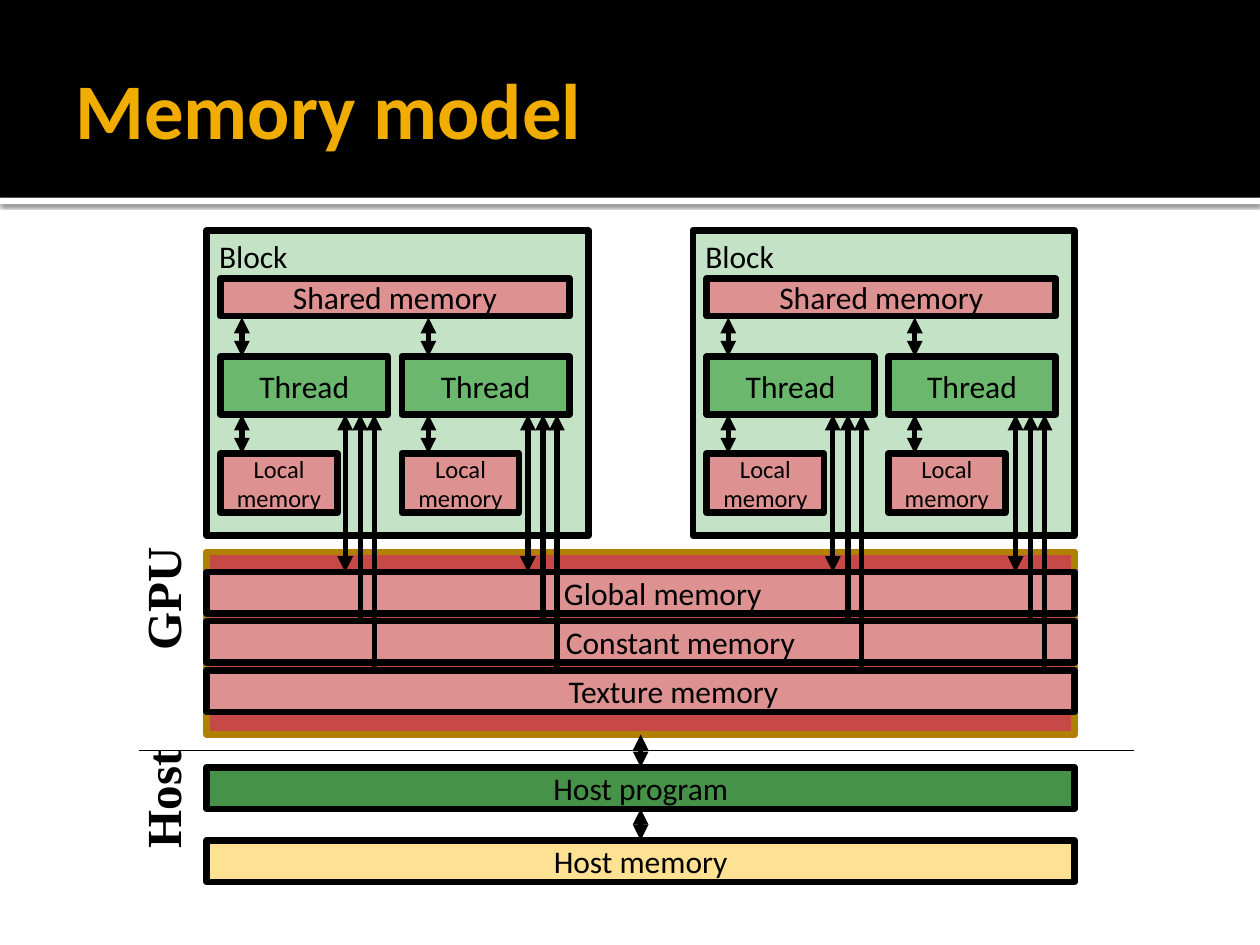
import pptx
import pptx.dml.color
import pptx.enum.shapes
import pptx.enum.text
import pptx.oxml
import pptx.oxml.ns
import pptx.util

RGBColor = pptx.dml.color.RGBColor
ALIGN = pptx.enum.text.PP_ALIGN
ANCHOR = pptx.enum.text.MSO_ANCHOR
RECTANGLE = pptx.enum.shapes.MSO_SHAPE.RECTANGLE
STRAIGHT = pptx.enum.shapes.MSO_CONNECTOR.STRAIGHT

BLACK = RGBColor(0x00, 0x00, 0x00)
WHITE = RGBColor(0xFF, 0xFF, 0xFF)
AMBER = RGBColor(0xF0, 0xAD, 0x00)
GOLD = RGBColor(0xB2, 0x80, 0x00)
CREAM = RGBColor(0xFF, 0xE1, 0x93)
RED = RGBColor(0xC6, 0x48, 0x47)
PINK = RGBColor(0xDD, 0x91, 0x91)
PALE_GREEN = RGBColor(0xC4, 0xE2, 0xC5)
GREEN = RGBColor(0x6B, 0xB7, 0x6D)
DARK_GREEN = RGBColor(0x47, 0x92, 0x49)

# The slide is a grid of 100 columns by 75 rows, each a tenth of an inch
COLUMNS, ROWS = 100, 75
BAR_LEFT, BAR_WIDTH, BAR_HEIGHT = 16.4, 68.9, 3.3
THREAD_TOP, THREAD_HEIGHT = 28.3, 4.6
THREAD_BOTTOM = THREAD_TOP + THREAD_HEIGHT
MEMORY_TOP, MEMORY_PITCH = 45.4, 3.9
BODY = {"size": pptx.util.Pt(18), "name": "Calibri"}
SMALL = {**BODY, "size": pptx.util.Pt(14)}
TITLE = {"size": pptx.util.Pt(45), "name": "Calibri", "bold": True}
SIDE = {"size": pptx.util.Pt(28), "name": "Times New Roman", "bold": True}


def grid(*cells):
    """Turn grid units into lengths."""
    return [pptx.util.Inches(cell / 10) for cell in cells]


def write(box, text, font, color=BLACK, align=ALIGN.LEFT, indent=0):
    """Put one formatted paragraph into a box."""
    box.text_frame.word_wrap = True
    para = box.text_frame.paragraphs[0]
    para.alignment = align
    if indent:
        properties = para._p.get_or_add_pPr()
        properties.set("marL", str(grid(indent)[0]))
        properties.set("indent", "0")
    span = para.add_run()
    span.text = text
    for name, value in font.items():
        setattr(span.font, name, value)
    span.font.color.rgb = color


def add_panel(page, place, fill, line=None):
    """Add a plain rectangle, with an outline if a line colour is given."""
    panel = page.shapes.add_shape(RECTANGLE, *grid(*place))
    panel.shadow.inherit = False
    panel.fill.solid()
    panel.fill.fore_color.rgb = fill
    if line is None:
        panel.line.fill.background()
    else:
        panel.line.color.rgb = line
        panel.line.width = pptx.util.Pt(3.78)
    return panel


def add_label_panel(page, place, fill, text, font=BODY, indent=0):
    """Add an outlined rectangle with centred text."""
    panel = add_panel(page, place, fill, BLACK)
    panel.text_frame.vertical_anchor = ANCHOR.MIDDLE
    write(panel, text, font, align=ALIGN.CENTER, indent=indent)
    return panel


def add_line(page, start, end, width=3, heads=("headEnd", "tailEnd")):
    """Add a straight line with triangles at the named ends."""
    line = page.shapes.add_connector(STRAIGHT, *grid(*start, *end))
    line.line.color.rgb = BLACK
    line.line.width = pptx.util.Pt(width)
    outline = line.line._get_or_add_ln()
    for head in heads:
        pptx.oxml.ns.qn("a:" + head)
        outline.append(pptx.oxml.parse_xml(
            f'<a:{head} {pptx.oxml.ns.nsdecls("a")} type="triangle"/>'))
    line._element.spPr.append(pptx.oxml.parse_xml(
        f'<a:effectLst {pptx.oxml.ns.nsdecls("a")}/>'))
    return line


def join(page, upper, lower):
    """Link the bottom of one rectangle to the top of the next."""
    line = add_line(page, (0, 0), (0, 0))
    line.begin_connect(upper, 2)
    line.end_connect(lower, 0)


def add_header(page):
    """Add the black band, the shaded strip below it and the title."""
    strip = add_panel(page, (0, 15.7, COLUMNS, 0.5), WHITE)
    effects = strip._element.spPr.find(pptx.oxml.ns.qn("a:effectLst"))
    effects.append(pptx.oxml.parse_xml(
        f'<a:outerShdw {pptx.oxml.ns.nsdecls("a")} blurRad="31750" dist="10160" '
        'dir="5400000" algn="tl" rotWithShape="0"><a:srgbClr val="000000">'
        '<a:alpha val="60000"/></a:srgbClr></a:outerShdw>'))
    add_panel(page, (0, 0, COLUMNS, 15.7), BLACK)
    box = page.shapes.add_textbox(*grid(5, 1.7, 90, 13.7))
    box.text_frame.vertical_anchor = ANCHOR.MIDDLE
    box.text_frame.margin_right = pptx.util.Inches(0.05)
    write(box, "Memory model", TITLE, AMBER)


def add_block(page, left):
    """Add a block with shared memory and two threads."""
    block = add_panel(page, (left, 18.3, 30.3, 24.2), PALE_GREEN, BLACK)
    block.text_frame.vertical_anchor = ANCHOR.TOP
    write(block, "Block", BODY)
    inner = left + 1.1
    add_label_panel(page, (inner, 22.1, 27.7, 3), PINK, "Shared memory")
    for thread, arrow in ((inner, left + 2.8), (inner + 14.4, left + 17.6)):
        add_label_panel(page, (thread, THREAD_TOP, 13.3, THREAD_HEIGHT), GREEN, "Thread")
        add_label_panel(page, (thread, 36, 9.3, 4.7), PINK, "Local memory", SMALL)
        add_line(page, (arrow, 25.2), (arrow, THREAD_TOP))
        add_line(page, (arrow, THREAD_BOTTOM), (arrow, 36))


def add_memory_links(page, left):
    """Link one thread to global, constant and texture memory."""
    for index, shift in enumerate((0, 1.2, 2.3)):
        column = left + shift
        heads = ("tailEnd",) if index else ("headEnd", "tailEnd")
        add_line(page, (column, MEMORY_TOP + index * MEMORY_PITCH),
                 (column, THREAD_BOTTOM), heads=heads)


def add_side_label(page, top, text):
    """Add a label that reads upwards."""
    box = page.shapes.add_textbox(*grid(10, top, 5.4, 14.4))
    write(box, text, SIDE)
    box.text_frame._txBody.bodyPr.set("vert", "vert270")


def main():
    deck = pptx.Presentation()
    deck.slide_width, deck.slide_height = grid(COLUMNS, ROWS)
    page = deck.slides.add_slide(deck.slide_layouts[6])
    add_header(page)

    # Device: frame, blocks and the memories they share
    device = add_panel(page, (BAR_LEFT, 43.8, BAR_WIDTH, 14.5), RED, GOLD)
    for left in (55, BAR_LEFT):
        add_block(page, left)
    memories = (("Global memory", 3.5), ("Constant memory", 6.3), ("Texture memory", 5.2))
    for index, (text, indent) in enumerate(memories):
        top = MEMORY_TOP + index * MEMORY_PITCH
        add_label_panel(page, (BAR_LEFT, top, BAR_WIDTH, BAR_HEIGHT), PINK, text, indent=indent)

    # Host: memory and program
    memory = add_label_panel(page, (BAR_LEFT, 66.7, BAR_WIDTH, BAR_HEIGHT), CREAM, "Host memory")
    program = add_label_panel(page, (BAR_LEFT, 60.9, BAR_WIDTH, BAR_HEIGHT),
                              DARK_GREEN, "Host program")

    # Links, divider and side labels
    join(page, program, memory)
    for left in (27.4, 41.9, 66.1, 80.6):
        add_memory_links(page, left)
    join(page, device, program)
    add_line(page, (11, 59.6), (90, 59.6), width=0.5, heads=())
    add_side_label(page, 53.9, "Host")
    add_side_label(page, 38.2, "GPU")

    deck.save("out.pptx")


if __name__ == "__main__":
    main()
